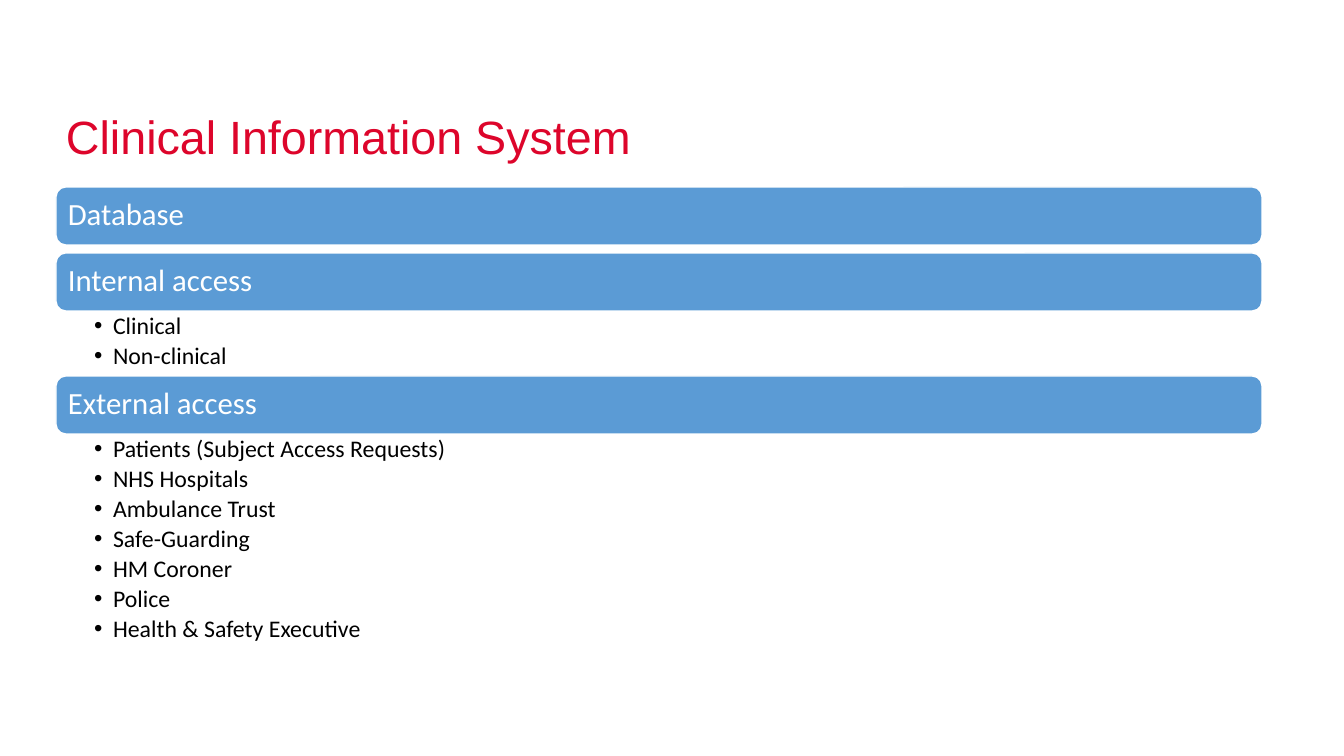
from lxml.etree import SubElement
from pptx import Presentation
from pptx.dml.color import RGBColor
from pptx.enum.shapes import MSO_SHAPE
from pptx.enum.text import MSO_ANCHOR, PP_ALIGN
from pptx.oxml.ns import qn
from pptx.util import Emu, Pt

COLORS = {"title": "DD052B", "bar": "5B9BD5", "white": "FFFFFF", "text": "000000"}
EMU_PER_PX = 914400 / 100.8
LEFT, WIDTH = 56, 1206
STACK_TOP, BAR_HEIGHT, BAR_GAP, ITEM_HEIGHT = 187, 58, 8, 32

SECTIONS = [
    ("Database", []),
    ("Internal access", ["Clinical", "Non-clinical"]),
    ("External access", [
        "Patients (Subject Access Requests)",
        "NHS Hospitals",
        "Ambulance Trust",
        "Safe-Guarding",
        "HM Coroner",
        "Police",
        "Health & Safety Executive",
    ]),
]


def px(value):
    return Emu(round(value * EMU_PER_PX))


def color(name):
    return RGBColor.from_string(COLORS[name])


class SlideBuilder:
    def __init__(self, slide):
        self.slide = slide

    def place(self, left, top, width, height):
        return [px(value) for value in (left, top, width, height)]

    def set_margins(self, text_frame, left, top, right, bottom):
        text_frame.margin_left = px(left)
        text_frame.margin_top = px(top)
        text_frame.margin_right = px(right)
        text_frame.margin_bottom = px(bottom)

    def style(self, paragraph, font_name, size, color_name):
        paragraph.alignment = PP_ALIGN.LEFT
        paragraph.line_spacing = 0.9
        for run in paragraph.runs:
            run.font.name = font_name
            run.font.size = Pt(size)
            run.font.color.rgb = color(color_name)

    def add_title(self, text, left, top, width, height):
        shape = self.slide.shapes.add_textbox(*self.place(left, top, width, height))
        shape.text_frame.word_wrap = True
        shape.text_frame.text = text
        self.style(shape.text_frame.paragraphs[0], "Arial", 33.3, "title")

    def add_bar(self, text, left, top, width, height):
        shape = self.slide.shapes.add_shape(
            MSO_SHAPE.ROUNDED_RECTANGLE, *self.place(left, top, width, height))
        shape.shadow.inherit = False
        shape.fill.solid()
        shape.fill.fore_color.rgb = color("bar")
        shape.line.color.rgb = color("white")
        shape.line.width = Pt(1)
        text_frame = shape.text_frame
        text_frame.word_wrap = True
        text_frame.vertical_anchor = MSO_ANCHOR.MIDDLE
        self.set_margins(text_frame, 9, 9, 9, 9)
        text_frame.text = text
        self.style(text_frame.paragraphs[0], "Calibri", 22, "white")

    def add_list(self, items, left, top, width, height):
        shape = self.slide.shapes.add_textbox(*self.place(left, top, width, height))
        text_frame = shape.text_frame
        text_frame.word_wrap = True
        self.set_margins(text_frame, 38, 3, 17, 3)
        text_frame.text = "\n".join(items)
        for paragraph in text_frame.paragraphs:
            self.add_bullet(paragraph)
            self.style(paragraph, "Calibri", 17, "text")
            paragraph.space_after = Pt(3.1)

    def add_bullet(self, paragraph):
        properties = paragraph._p.get_or_add_pPr()
        properties.set("marL", str(px(19)))
        properties.set("indent", str(px(-19)))
        SubElement(properties, qn("a:buFont")).set("typeface", "Arial")
        SubElement(properties, qn("a:buChar")).set("char", "•")


def main():
    presentation = Presentation()
    presentation.slide_width = px(1344)
    presentation.slide_height = px(756)
    builder = SlideBuilder(presentation.slides.add_slide(presentation.slide_layouts[6]))

    builder.add_title("Clinical Information System", LEFT, 109, 630, 60)
    top = STACK_TOP
    for heading, items in SECTIONS:
        builder.add_bar(heading, LEFT, top, WIDTH, BAR_HEIGHT)
        top += BAR_HEIGHT
        if items:
            list_height = ITEM_HEIGHT * len(items) + 1
            builder.add_list(items, LEFT, top, WIDTH, list_height)
            top += list_height
        else:
            top += BAR_GAP

    presentation.save("out.pptx")


if __name__ == "__main__":
    main()
